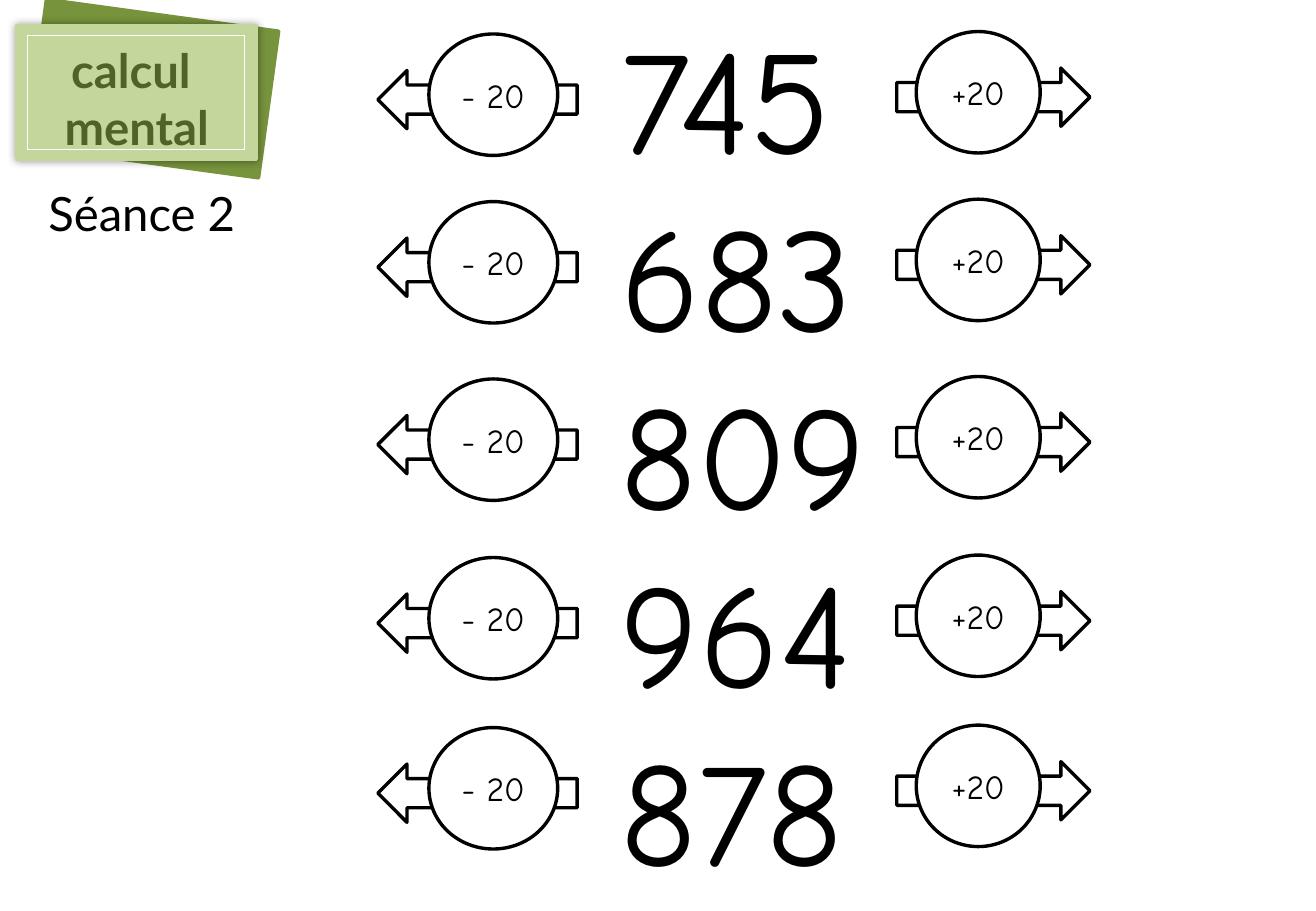
from lxml import etree
from pptx import Presentation
from pptx.dml.color import RGBColor
from pptx.enum.shapes import MSO_SHAPE
from pptx.enum.text import MSO_ANCHOR, MSO_AUTO_SIZE, PP_ALIGN
from pptx.oxml.ns import qn
from pptx.util import Emu, Pt

RECT, OVAL = MSO_SHAPE.RECTANGLE, MSO_SHAPE.OVAL
LEFT, RIGHT = MSO_SHAPE.LEFT_ARROW, MSO_SHAPE.RIGHT_ARROW
TOP, MID = MSO_ANCHOR.TOP, MSO_ANCHOR.MIDDLE
START, CENTER = PP_ALIGN.LEFT, PP_ALIGN.CENTER
FIXED = MSO_AUTO_SIZE.NONE

SCALE = 9144
BLACK, WHITE = "000000", "FFFFFF"
OLIVE, LIME, MOSS = "77933C", "C3D69B", "4F6228"
HEAD = {"name": "Lato", "size": Pt(28), "bold": True}
LABEL = {"name": "Lato", "size": Pt(28)}
DIGIT = {"name": "Comic Neue", "size": Pt(88)}
STEP = {"name": "Comic Neue", "size": Pt(20)}

NUMBERS = ["745", "683", "809", "964", "878"]
ROWS = [26, 164, 310, 457, 597]


def px(*vals):
    """Turn px lengths into EMU."""
    return [Emu(val * SCALE) for val in vals]


def color(code):
    """Turn a hex string into a colour."""
    return RGBColor.from_string(code)


def write(shape, lines, font, ink=BLACK, align=START, anchor=TOP):
    """Fill a shape with one paragraph per line."""
    frame = shape.text_frame
    form = {"word_wrap": True, "auto_size": FIXED, "vertical_anchor": anchor}
    for key, val in form.items():
        setattr(frame, key, val)
    frame.text = "\n".join(lines)
    for para in frame.paragraphs:
        para.alignment = align
        for key, val in font.items():
            setattr(para.runs[0].font, key, val)
        para.runs[0].font.color.rgb = color(ink)


def draw(shapes, kind, box, fill=None, line=BLACK, width=2):
    """Add a flat preset shape."""
    shape = shapes.add_shape(kind, *px(*box))
    shape.shadow.inherit = False
    if fill:
        shape.fill.solid()
        shape.fill.fore_color.rgb = color(fill)
    else:
        shape.fill.background()
    shape.line.color.rgb = color(line)
    shape.line.width = Pt(width)
    return shape


def shade(shape):
    """Give a shape a soft black glow."""
    effect = shape._element.spPr.find(qn("a:effectLst"))
    glow = etree.SubElement(effect, qn("a:outerShdw"), blurRad=str(Pt(5)),
                            dist="0", dir="0", algn="ctr", rotWithShape="0")
    tint = etree.SubElement(glow, qn("a:srgbClr"), val=BLACK)
    etree.SubElement(tint, qn("a:alpha"), val="40000")


def badge(slide, x, y):
    """Place the tilted card and its title."""
    shapes = slide.shapes.add_group_shape().shapes
    back = draw(shapes, RECT, (x + 15, y - 9, 193, 122), OLIVE, OLIVE)
    back.rotation = 7.8
    shade(draw(shapes, RECT, (x, y, 197, 110), LIME, LIME))
    draw(shapes, RECT, (x + 8, y + 8, 179, 94), None, WHITE, 0.25)
    title = slide.shapes.title
    spots = px(x + 16, y + 8, 165, 104)
    for key, val in zip(("left", "top", "width", "height"), spots):
        setattr(title, key, val)
    write(title, ["calcul ", "mental"], HEAD, MOSS, CENTER)
    slide.shapes._spTree.append(title._element)


def label(slide, box, lines, font):
    """Place a plain text box."""
    write(slide.shapes.add_textbox(*px(*box)), lines, font)


def steps(slide, x, y, kind, wide, inset, round_w, text):
    """Place a column of arrows with a labelled disc on each."""
    shapes = slide.shapes.add_group_shape().shapes
    for row in ROWS:
        top = y + row
        draw(shapes, kind, (x, top + 30, wide, 48))
        disc = draw(shapes, OVAL, (x + inset, top, round_w, 100), WHITE)
        write(disc, [text], STEP, align=CENTER, anchor=MID)


def main():
    """Build and save the slide."""
    deck = Presentation()
    deck.slide_width, deck.slide_height = px(1083, 750)
    slide = deck.slides.add_slide(deck.slide_layouts[5])
    badge(slide, 14, 21)
    label(slide, (30, 147, 181, 57), ["Séance 2"], LABEL)
    label(slide, (501, 0, 304, 751), NUMBERS, DIGIT)
    steps(slide, 738, 0, RIGHT, 159, 16, 102, "+20")
    steps(slide, 311, 2, LEFT, 164, 42, 106, "- 20")
    deck.save("out.pptx")


if __name__ == "__main__":
    main()
